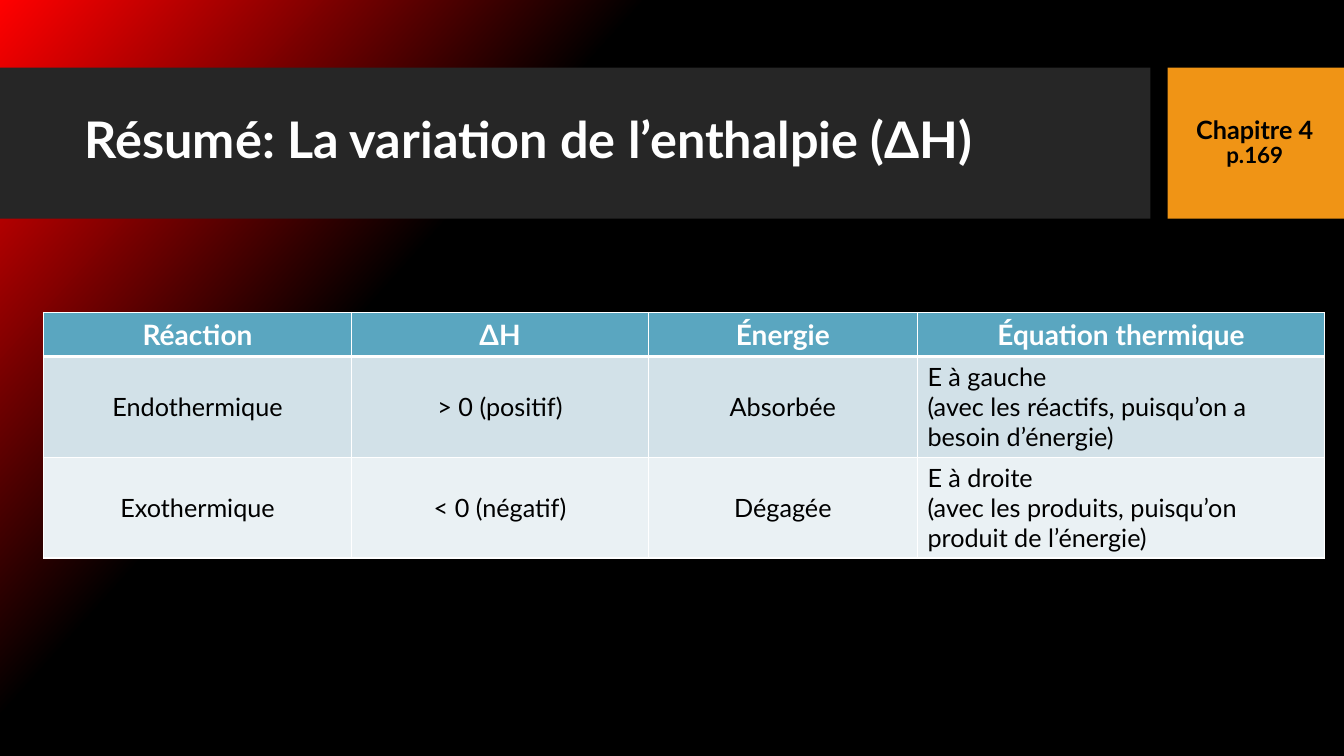
"""Build the enthalpy summary slide with its title band and reaction table."""
from dataclasses import dataclass

from lxml.etree import SubElement
from pptx import Presentation
from pptx.dml.color import RGBColor
from pptx.enum.shapes import MSO_SHAPE
from pptx.enum.text import MSO_ANCHOR, MSO_AUTO_SIZE, PP_ALIGN
from pptx.oxml import parse_xml
from pptx.oxml.ns import nsdecls, qn
from pptx.util import Inches, Pt

TITLE = "Résumé: La variation de l’enthalpie (ΔH)"
CHAPTER, PAGE_NUMBER = "Chapitre 4", "p.169"
HEADERS = ["Réaction", "ΔH", "Énergie", "Équation thermique"]
REACTIONS = [
    ["Endothermique", "> 0 (positif)", "Absorbée",
     "E à gauche\n(avec les réactifs, puisqu’on a besoin d’énergie)"],
    ["Exothermique", "< 0 (négatif)", "Dégagée",
     "E à droite\n(avec les produits, puisqu’on produit de l’énergie)"],
]
WIDTH, HEIGHT = 13.33, 7.5
BAND_TOP, BAND_HEIGHT, BAND_WIDTH = 0.67, 1.5, 11.41
BADGE_WIDTH = 1.75
TABLE_LEFT, TABLE_TOP = 0.43, 3.1
COLUMNS = [3.06, 2.94, 2.67, 4.04]
ROWS = [0.43, 1, 1]


@dataclass(frozen=True)
class Theme:
    """Colours, font and type sizes."""
    font: str = "Lato"
    glow: str = "FF0000"
    black: str = "000000"
    white: str = "FFFFFF"
    band: str = "262626"
    badge: str = "F09415"
    header: str = "5AA6C0"
    rows: tuple = ("D2E1E8", "EAF1F4")
    title_size: int = 36
    header_size: int = 20
    body_size: int = 18
    small_size: int = 16
    thin: int = 1
    thick: int = 3
    leading: float = 0.9


THEME = Theme()


def colour(value):
    """Turn a hex string into a colour."""
    return RGBColor.from_string(value)


def write(frame, lines, fill, bold, align, leading=None):
    """Write (text, size) lines as paragraphs."""
    for index, (text, size) in enumerate(lines):
        para = frame.add_paragraph() if index else frame.paragraphs[0]
        para.alignment = align
        para.line_spacing = leading
        span = para.add_run()
        span.text = text
        span.font.name = THEME.font
        span.font.size = Pt(size)
        span.font.bold = bold
        span.font.color.rgb = colour(fill)


def add_bar(page, left, width, fill):
    """Add a flat rectangle in the title band."""
    bar = page.shapes.add_shape(MSO_SHAPE.RECTANGLE, Inches(left), Inches(BAND_TOP),
                                Inches(width), Inches(BAND_HEIGHT))
    bar.shadow.inherit = False
    bar.fill.solid()
    bar.fill.fore_color.rgb = colour(fill)
    bar.line.fill.background()


def paint_background(page):
    """Fade the background from red to black."""
    fill = page.background.fill
    fill.gradient()
    fill.gradient_angle = 360 - 42
    stops = [(0, THEME.glow), (0.32, THEME.black)]
    for stop, (position, value) in zip(fill.gradient_stops, stops):
        stop.position = position
        stop.color.rgb = colour(value)


def add_borders(cell, sides):
    """Draw white lines on the given sides of a cell."""
    properties = cell._tc.get_or_add_tcPr()
    for index, (side, weight) in enumerate(sides.items()):
        line = parse_xml(f'<a:ln{side} {nsdecls("a")} w="{Pt(weight)}"/>')
        solid = SubElement(line, qn("a:solidFill"))
        SubElement(solid, qn("a:srgbClr"), val=THEME.white)
        properties.insert(index, line)


def add_title(page):
    """Place the title placeholder over the band."""
    title = page.shapes.title
    page.shapes._spTree.append(title._element)
    title.left, title.top = Inches(0.74), Inches(0.82)
    title.width, title.height = Inches(10.51), Inches(1.18)
    frame = title.text_frame
    frame.auto_size = MSO_AUTO_SIZE.NONE
    frame.vertical_anchor = MSO_ANCHOR.MIDDLE
    write(frame, [(TITLE, THEME.title_size)], THEME.white, True,
          PP_ALIGN.LEFT, THEME.leading)


def add_table(page):
    """Add the reaction table."""
    table = page.shapes.add_table(
        len(ROWS), len(COLUMNS), Inches(TABLE_LEFT), Inches(TABLE_TOP),
        Inches(sum(COLUMNS)), Inches(sum(ROWS))).table
    for column, width in zip(table.columns, COLUMNS):
        column.width = Inches(width)
    for row, height in zip(table.rows, ROWS):
        row.height = Inches(height)
    fills = [THEME.header, *THEME.rows]
    for r, texts in enumerate([HEADERS, *REACTIONS]):
        heading = r == 0
        size = THEME.header_size if heading else THEME.body_size
        ink = THEME.white if heading else THEME.black
        for c, text in enumerate(texts):
            cell = table.cell(r, c)
            cell.fill.solid()
            cell.fill.fore_color.rgb = colour(fills[r])
            cell.vertical_anchor = MSO_ANCHOR.TOP if heading else MSO_ANCHOR.MIDDLE
            lines = [(line, size) for line in text.split("\n")]
            align = PP_ALIGN.LEFT if len(lines) > 1 else PP_ALIGN.CENTER
            write(cell.text_frame, lines, ink, heading, align)
            add_borders(cell, {"L": THEME.thin, "R": THEME.thin,
                               "T": THEME.thick if r == 1 else THEME.thin,
                               "B": THEME.thick if heading else THEME.thin})


def add_chapter(page):
    """Write the chapter reference over the badge."""
    box = page.shapes.add_textbox(Inches(WIDTH - 1.77), Inches(BAND_TOP),
                                  Inches(1.77), Inches(BAND_HEIGHT))
    frame = box.text_frame
    frame.word_wrap = True
    frame.vertical_anchor = MSO_ANCHOR.MIDDLE
    write(frame, [(CHAPTER, THEME.body_size), (PAGE_NUMBER, THEME.small_size)],
          THEME.black, True, PP_ALIGN.CENTER, THEME.leading)


def main():
    """Assemble and save the deck."""
    deck = Presentation()
    deck.slide_width, deck.slide_height = Inches(WIDTH), Inches(HEIGHT)
    page = deck.slides.add_slide(deck.slide_layouts[5])
    paint_background(page)
    add_bar(page, 0, BAND_WIDTH, THEME.band)
    add_bar(page, WIDTH - BADGE_WIDTH, BADGE_WIDTH, THEME.badge)
    add_title(page)
    add_table(page)
    add_chapter(page)
    deck.save("out.pptx")


if __name__ == "__main__":
    main()
